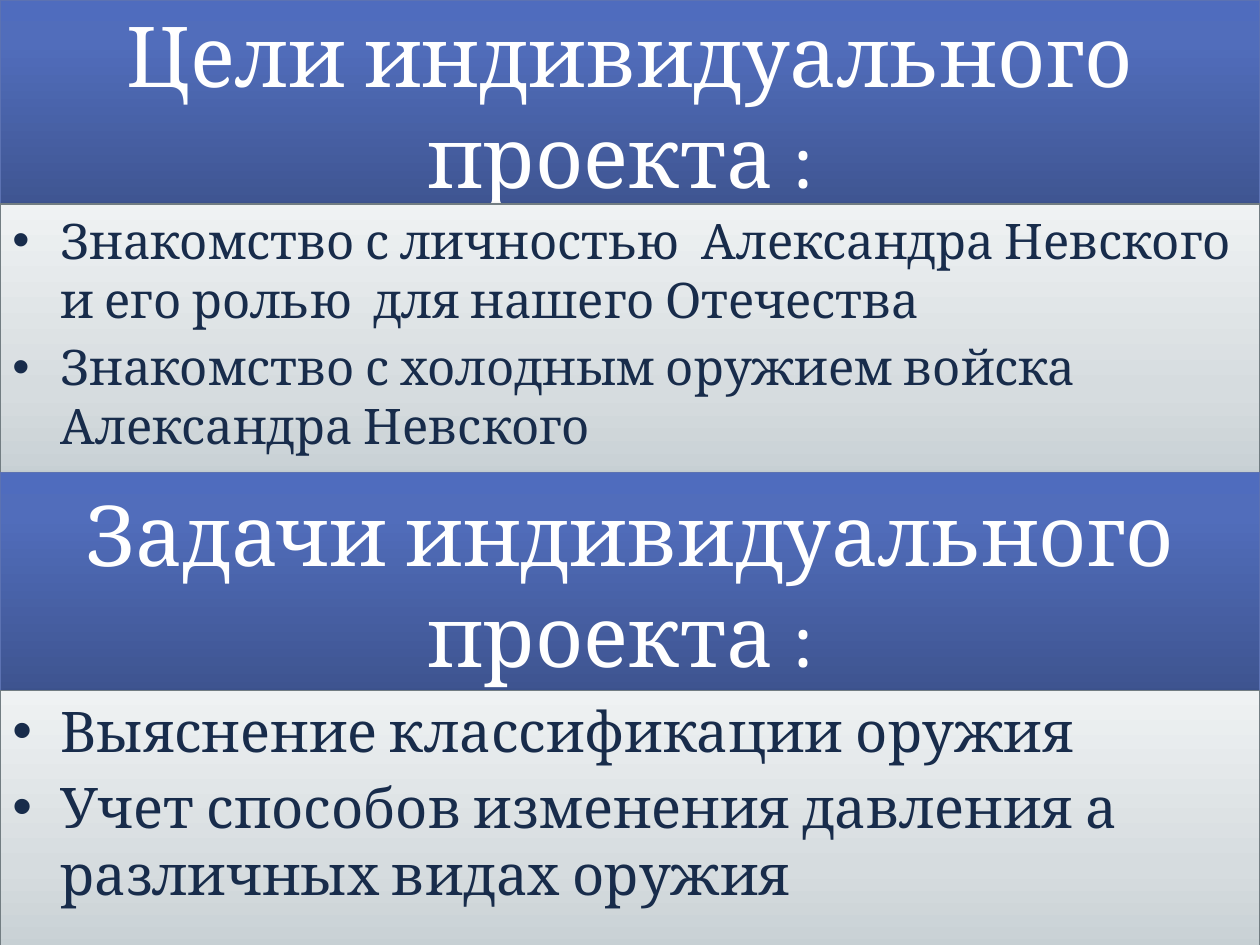
from dataclasses import dataclass

from lxml.etree import SubElement
from pptx import Presentation
from pptx.dml.color import RGBColor
from pptx.enum.shapes import MSO_SHAPE
from pptx.enum.text import MSO_ANCHOR, PP_ALIGN
from pptx.oxml.ns import qn
from pptx.shapes.autoshape import Shape
from pptx.slide import Slide
from pptx.text.text import TextFrame
from pptx.util import Emu, Inches, Pt


@dataclass(frozen=True)
class BandStyle:
    """Look of one kind of band; gradient stops run from bottom to top."""
    stops: tuple[tuple[int, str], ...]
    line: str
    text: str
    shadow_opacity: int
    shadow_distance: float


@dataclass(frozen=True)
class Theme:
    """Colours and type of the slide."""
    font: str = "Cambria"
    heading_size: int = 48
    heading_leading: int = 58
    goal_size: int = 28
    task_size: int = 32
    bullet_gap: int = 5
    heading: BandStyle = BandStyle(
        ((0, "3E5490"), (80, "516DBB"), (100, "4F6CBE")), "5C72B2", "FFFFFF", 35, 1.8)
    body: BandStyle = BandStyle(
        ((0, "C5CED2"), (35, "D6DCDF"), (100, "EFF2F3")), "727D82", "182C4B", 38, 1.6)


@dataclass(frozen=True)
class Section:
    """A heading band over a list band; places are percent of slide height."""
    heading: str
    heading_top: float
    heading_height: float
    items: tuple[str, ...]
    items_top: float
    items_height: float
    items_size: int


THEME = Theme()
SECTIONS = (
    Section(
        "Цели индивидуального проекта : ", 0, 22.4,
        ("Знакомство с личностью  Александра Невского и его ролью  для нашего Отечества",
         "Знакомство с холодным оружием войска Александра Невского"),
        21.6, 30.4, THEME.goal_size),
    Section(
        "Задачи индивидуального проекта : ", 50, 23.07,
        ("Выяснение классификации оружия",
         "Учет способов изменения давления а различных видах оружия"),
        73.07, 28.8, THEME.task_size),
)


def fill_gradient(shape: Shape, stops: tuple[tuple[int, str], ...]) -> None:
    """Fill a shape with a vertical gradient."""
    shape.fill.gradient()
    shape.fill.gradient_angle = 90
    stop_list = shape.element.spPr.find(qn("a:gradFill")).find(qn("a:gsLst"))
    for old_stop in list(stop_list):
        stop_list.remove(old_stop)
    for position, color in stops:
        stop = SubElement(stop_list, qn("a:gs"), pos=str(position * 1000))
        SubElement(stop, qn("a:srgbClr"), val=color)


def add_shadow(shape: Shape, style: BandStyle) -> None:
    """Give a shape a soft black shadow falling downwards."""
    shape.shadow.inherit = False
    effects = shape.element.spPr.find(qn("a:effectLst"))
    shadow = SubElement(
        effects, qn("a:outerShdw"), blurRad=str(Pt(3.1)),
        dist=str(Pt(style.shadow_distance)), dir="5400000", rotWithShape="0")
    color = SubElement(shadow, qn("a:srgbClr"), val="000000")
    SubElement(color, qn("a:alpha"), val=str(style.shadow_opacity * 1000))


def add_band(slide: Slide, size: tuple[int, int], top: float, height: float,
             style: BandStyle, anchor: MSO_ANCHOR) -> TextFrame:
    """Draw a band over the full slide width and return its text frame."""
    slide_width, slide_height = size
    shape = slide.shapes.add_shape(
        MSO_SHAPE.RECTANGLE, 0, Emu(round(slide_height * top / 100)),
        slide_width, Emu(round(slide_height * height / 100)))
    fill_gradient(shape, style.stops)
    shape.line.color.rgb = RGBColor.from_string(style.line)
    shape.line.width = Pt(0.75)
    add_shadow(shape, style)
    shape.text_frame.word_wrap = True
    shape.text_frame.vertical_anchor = anchor
    return shape.text_frame


def write_text(frame: TextFrame, texts: tuple[str, ...], *, size: int, color: str,
               align: PP_ALIGN = PP_ALIGN.LEFT, leading: int | None = None,
               gap: int = 0, bullet: str | None = None) -> None:
    """Write one paragraph per text in the given format."""
    for index, text in enumerate(texts):
        paragraph = frame.add_paragraph() if index else frame.paragraphs[0]
        if bullet:
            properties = paragraph._p.get_or_add_pPr()
            properties.set("marL", str(Inches(0.38)))
            properties.set("indent", str(-Inches(0.38)))
            SubElement(properties, qn("a:buFont"), typeface="Arial")
            SubElement(properties, qn("a:buChar"), char=bullet)
        paragraph.alignment = align
        if leading:
            paragraph.line_spacing = Pt(leading)
        if index:
            paragraph.space_before = Pt(gap)
        run = paragraph.add_run()
        run.text = text
        run.font.name = THEME.font
        run.font.size = Pt(size)
        run.font.color.rgb = RGBColor.from_string(color)


def add_section(slide: Slide, size: tuple[int, int], section: Section) -> None:
    """Draw a heading band and the list band under it."""
    heading = add_band(slide, size, section.heading_top, section.heading_height,
                       THEME.heading, MSO_ANCHOR.BOTTOM)
    write_text(heading, (section.heading,), size=THEME.heading_size,
               color=THEME.heading.text, align=PP_ALIGN.CENTER,
               leading=THEME.heading_leading)
    items = add_band(slide, size, section.items_top, section.items_height,
                     THEME.body, MSO_ANCHOR.TOP)
    write_text(items, section.items, size=section.items_size,
               color=THEME.body.text, gap=THEME.bullet_gap, bullet="•")


def main() -> None:
    """Build the slide and save it."""
    presentation = Presentation()
    presentation.slide_width = Inches(10)
    presentation.slide_height = Inches(7.5)
    slide = presentation.slides.add_slide(presentation.slide_layouts[6])
    size = (presentation.slide_width, presentation.slide_height)
    for section in SECTIONS:
        add_section(slide, size, section)
    presentation.save("out.pptx")


if __name__ == "__main__":
    main()
